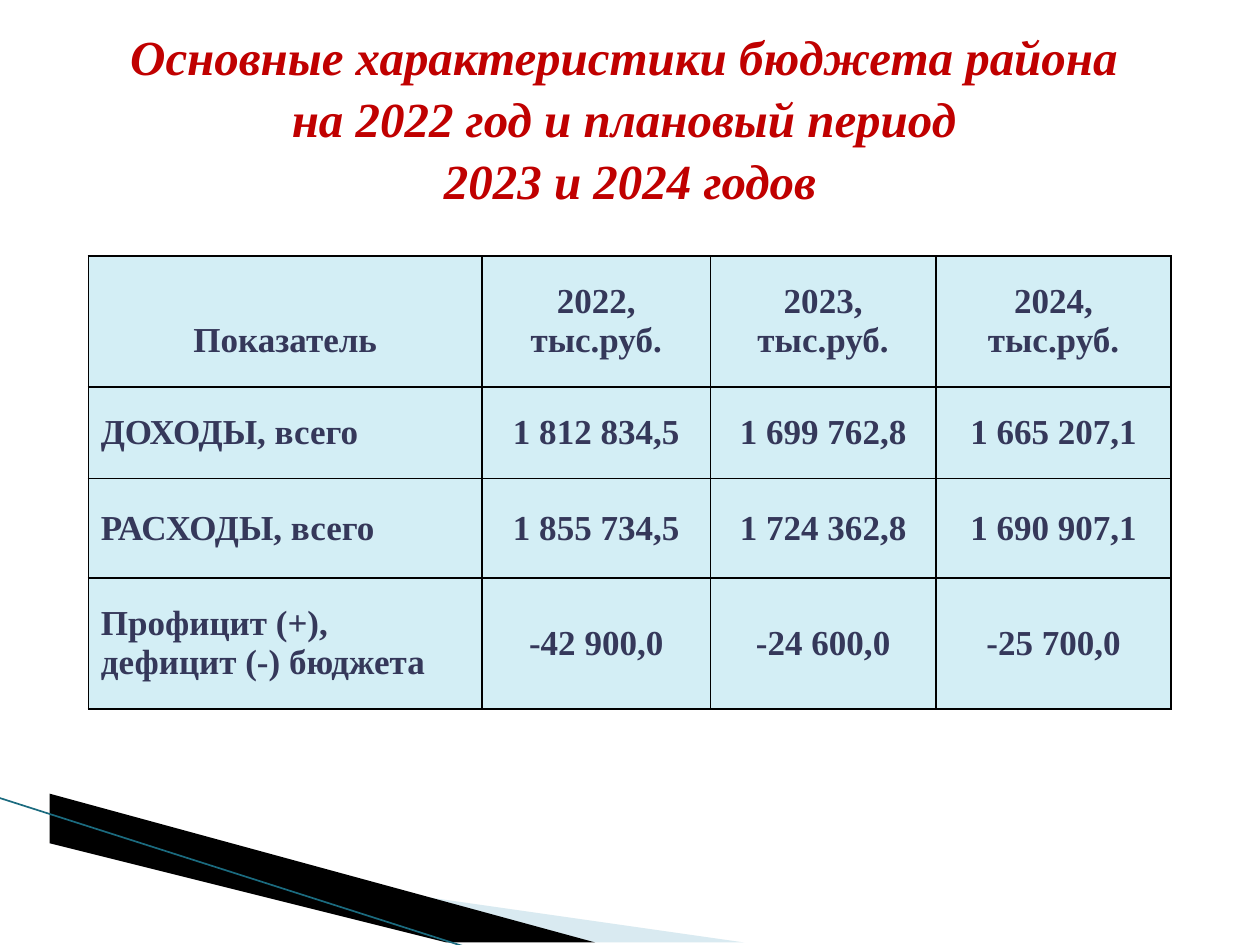
import pptx
import pptx.util
import pptx.dml.color
import pptx.enum.shapes
import pptx.enum.text
from lxml import etree
from pptx.oxml import ns

Cm, Pt = pptx.util.Cm, pptx.util.Pt
RGBColor = pptx.dml.color.RGBColor
PP_ALIGN = pptx.enum.text.PP_ALIGN
MIDDLE = pptx.enum.text.MSO_ANCHOR.MIDDLE

RED = RGBColor(0xC0, 0x00, 0x00)
NAVY = RGBColor(0x35, 0x38, 0x5A)
ICE = RGBColor(0xD3, 0xEE, 0xF5)
SKY = RGBColor(0xA0, 0xCB, 0xDC)
TEAL = RGBColor(0x1B, 0x6B, 0x7F)
BLACK = RGBColor(0x00, 0x00, 0x00)

# A vertical tab is a line break within the paragraph
HEADING = ("Основные характеристики бюджета района \v"
           "на 2022 год и плановый период \v2023 и 2024 годов")
BUDGET = [
    ("Показатель", "2022, тыс.руб.", "2023, тыс.руб.", "2024, тыс.руб."),
    ("ДОХОДЫ, всего", "1 812 834,5", "1 699 762,8", "1 665 207,1"),
    ("РАСХОДЫ, всего", "1 855 734,5", "1 724 362,8", "1 690 907,1"),
    ("Профицит (+), дефицит (-) бюджета", "-42 900,0", "-24 600,0", "-25 700,0"),
]
COLUMN_WIDTHS = (7.94, 4.6, 4.55, 4.74)
ROW_HEIGHTS = (2.64, 1.85, 2, 2.64)

# Corner decoration, in centimetres: points, colour, opacity in percent
WEDGES = [
    ([(1.4, 16.53), (15.11, 19.07), (11.58, 19.07), (1.4, 16.51)], SKY, 40),
    ([(1.35, 16.48), (11.61, 19.07), (9.45, 19.1), (1.37, 16.51)], BLACK, 100),
]
EDGE = (-0.03, 16.08, 9.42, 19.1)

HEADING_FONT = {"name": "Times New Roman", "size": Pt(28), "bold": True, "italic": True}
TABLE_FONT = {"name": "Times New Roman", "size": Pt(20), "bold": True}


def set_format(target, values):
    for attribute, value in values.items():
        setattr(target, attribute, value)


def set_font(paragraph, values, color):
    set_format(paragraph.font, values)
    paragraph.font.color.rgb = color


def add_xml(parent, tag, **attributes):
    return etree.SubElement(parent, ns.qn(tag), attributes)


def add_borders(cell):
    properties = cell._tc.get_or_add_tcPr()
    for side in ("a:lnL", "a:lnR", "a:lnT", "a:lnB"):
        border = add_xml(properties, side, w=str(Pt(1)))
        add_xml(add_xml(border, "a:solidFill"), "a:srgbClr", val=str(BLACK))


def add_decoration(shapes):
    for (start, *others), color, opacity in WEDGES:
        outline = shapes.build_freeform(*start, scale=float(Cm(1)))
        outline.add_line_segments(others, close=True)
        wedge = outline.convert_to_shape()
        wedge.shadow.inherit = False
        wedge.line.fill.background()
        wedge.fill.solid()
        wedge.fill.fore_color.rgb = color
        if opacity < 100:
            fill_color = wedge._element.spPr.find(".//" + ns.qn("a:srgbClr"))
            add_xml(fill_color, "a:alpha", val=str(opacity * 1000))
    edge = shapes.add_connector(pptx.enum.shapes.MSO_CONNECTOR.STRAIGHT, *map(Cm, EDGE))
    edge.line.color.rgb = TEAL
    edge.line.width = Pt(0.95)
    add_xml(edge._element.spPr, "a:effectLst")


def add_heading(title):
    set_format(title, {"left": Cm(1.27), "top": Cm(0.76),
                       "width": Cm(22.86), "height": Cm(3.18)})
    title.text_frame.text = HEADING
    set_format(title.text_frame, {"word_wrap": True, "vertical_anchor": MIDDLE,
                                  "auto_size": pptx.enum.text.MSO_AUTO_SIZE.NONE})
    paragraph = title.text_frame.paragraphs[0]
    set_format(paragraph, {"alignment": PP_ALIGN.CENTER, "line_spacing": 1.05})
    set_font(paragraph, HEADING_FONT, RED)


def add_budget(shapes):
    budget = shapes.add_table(len(ROW_HEIGHTS), len(COLUMN_WIDTHS), Cm(1.78), Cm(5.16),
                              Cm(sum(COLUMN_WIDTHS)), Cm(sum(ROW_HEIGHTS))).table
    for column, width in zip(budget.columns, COLUMN_WIDTHS):
        column.width = Cm(width)
    for row, height in zip(budget.rows, ROW_HEIGHTS):
        row.height = Cm(height)
    for r, values in enumerate(BUDGET):
        for c, value in enumerate(values):
            cell = budget.cell(r, c)
            add_borders(cell)
            cell.fill.solid()
            cell.fill.fore_color.rgb = ICE
            cell.vertical_anchor = MIDDLE
            cell.text = value
            paragraph = cell.text_frame.paragraphs[0]
            is_label = r > 0 and c == 0
            paragraph.alignment = PP_ALIGN.LEFT if is_label else PP_ALIGN.CENTER
            set_font(paragraph, TABLE_FONT, NAVY)
    # Lowers the first heading to the second line of its neighbours
    budget.cell(0, 0).margin_top = Cm(0.92)


def main():
    deck = pptx.Presentation()
    set_format(deck, {"slide_width": Cm(25.4), "slide_height": Cm(19.05)})
    slide = deck.slides.add_slide(deck.slide_layouts.get_by_name("Title Only"))
    add_decoration(slide.shapes)
    add_heading(slide.shapes.title)
    add_budget(slide.shapes)
    deck.save("out.pptx")


if __name__ == "__main__":
    main()
